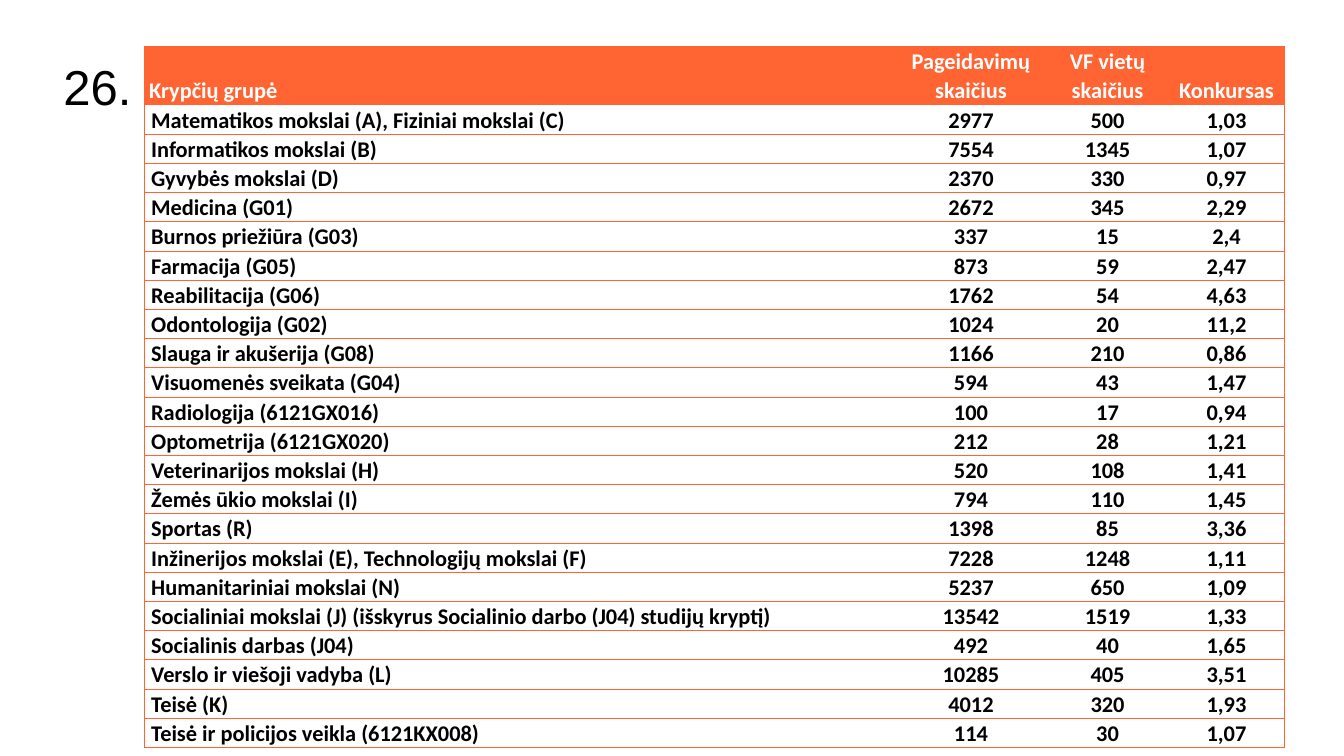
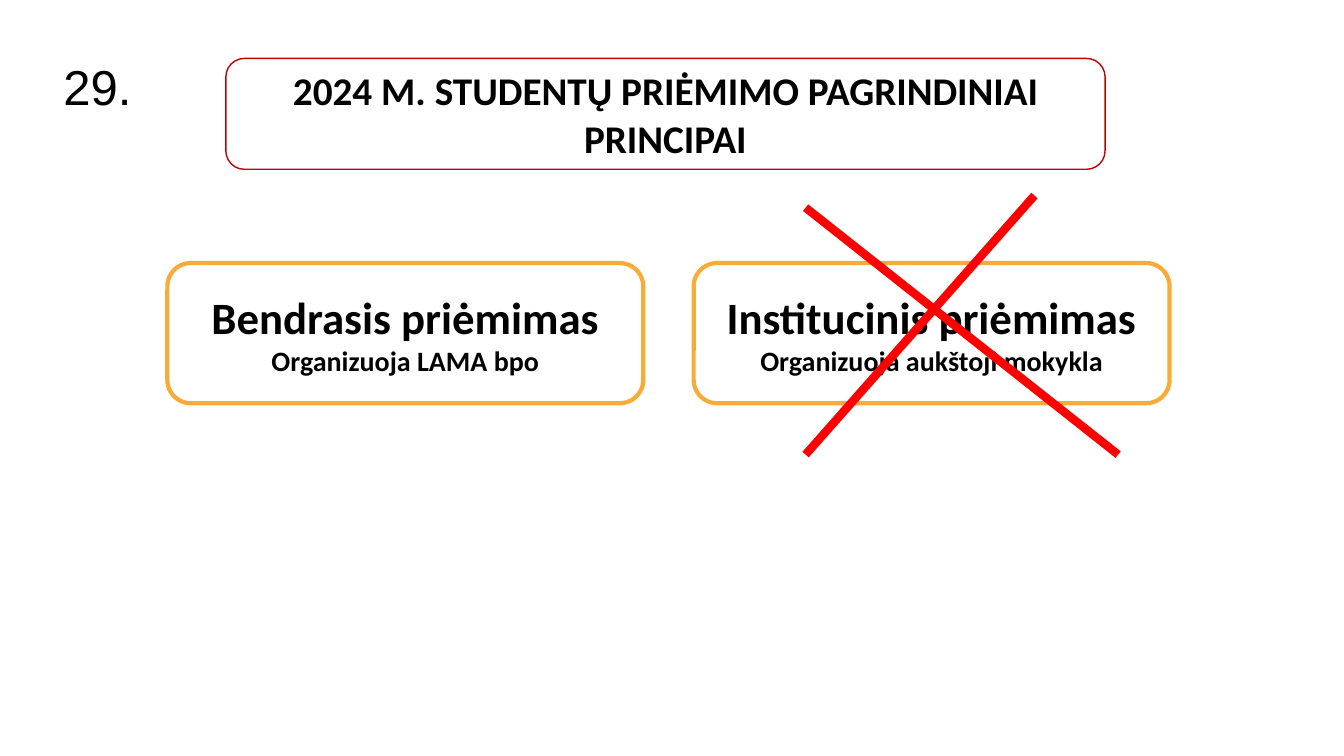
from dataclasses import dataclass

from lxml import etree
from pptx import Presentation
from pptx.dml.color import RGBColor
from pptx.enum.shapes import MSO_CONNECTOR, MSO_SHAPE
from pptx.enum.text import MSO_ANCHOR, PP_ALIGN
from pptx.oxml.ns import qn
from pptx.util import Inches, Pt

LEFT, CENTER = PP_ALIGN.LEFT, PP_ALIGN.CENTER
TOP, MIDDLE, BOTTOM = MSO_ANCHOR.TOP, MSO_ANCHOR.MIDDLE, MSO_ANCHOR.BOTTOM
ROUNDED = MSO_SHAPE.ROUNDED_RECTANGLE
STRAIGHT = MSO_CONNECTOR.STRAIGHT
PLAIN_TABLE_STYLE = "{2D5ABB26-0587-4C30-8999-92F81FD0307C}"


@dataclass(frozen=True)
class Theme:
    ink: str = "000000"
    paper: str = "FFFFFF"
    table: str = "FF6432"
    heading: str = "C00000"
    option: str = "FAAA37"
    cross: str = "FF0000"
    number_font: str = "Arial"
    body_font: str = "Calibri"
    number_size: int = 35
    heading_size: int = 28
    option_size: int = 32
    organizer_size: int = 20
    table_size: int = 16
    table_border: float = 0.5
    table_spacing: float = 1.07


THEME = Theme()

COLUMN_WIDTHS = (7.45, 1.5, 1.21, 1.15)
HEADER_HEIGHT, ROW_HEIGHT = 0.58, 0.29
HEADERS = ("Krypčių grupė", "Pageidavimų skaičius", "VF vietų skaičius", "Konkursas")
ADMISSIONS = (
    ("Matematikos mokslai (A), Fiziniai mokslai (C)", "2977", "500", "1,03"),
    ("Informatikos mokslai (B)", "7554", "1345", "1,07"),
    ("Gyvybės mokslai (D)", "2370", "330", "0,97"),
    ("Medicina (G01)", "2672", "345", "2,29"),
    ("Burnos priežiūra (G03)", "337", "15", "2,4"),
    ("Farmacija (G05)", "873", "59", "2,47"),
    ("Reabilitacija (G06)", "1762", "54", "4,63"),
    ("Odontologija (G02)", "1024", "20", "11,2"),
    ("Slauga ir akušerija (G08)", "1166", "210", "0,86"),
    ("Visuomenės sveikata (G04)", "594", "43", "1,47"),
    ("Radiologija (6121GX016)", "100", "17", "0,94"),
    ("Optometrija (6121GX020)", "212", "28", "1,21"),
    ("Veterinarijos mokslai (H)", "520", "108", "1,41"),
    ("Žemės ūkio mokslai (I)", "794", "110", "1,45"),
    ("Sportas (R)", "1398", "85", "3,36"),
    ("Inžinerijos mokslai (E), Technologijų mokslai (F)", "7228", "1248", "1,11"),
    ("Humanitariniai mokslai (N)", "5237", "650", "1,09"),
    ("Socialiniai mokslai (J) (išskyrus Socialinio darbo (J04) studijų kryptį)",
     "13542", "1519", "1,33"),
    ("Socialinis darbas (J04)", "492", "40", "1,65"),
    ("Verslo ir viešoji vadyba (L)", "10285", "405", "3,51"),
    ("Teisė (K)", "4012", "320", "1,93"),
    ("Teisė ir policijos veikla (6121KX008)", "114", "30", "1,07"),
)
OPTIONS = (
    ("Bendrasis priėmimas", "Organizuoja LAMA bpo"),
    ("Institucinis priėmimas", "Organizuoja aukštoji mokykla"),
)
OPTION_LEFT, OPTION_TOP, OPTION_WIDTH, OPTION_HEIGHT = 1.66, 2.61, 4.72, 1.39
OPTION_GAP = 0.5
CROSS_STROKES = ((7.99, 2.06, 11.09, 4.51), (10.26, 1.94, 7.99, 4.51))


def write(paragraph, text, size, color=THEME.ink, font=THEME.body_font, bold=True, align=CENTER):
    paragraph.text = text
    paragraph.alignment = align
    for run in paragraph.runs:
        run.font.name = font
        run.font.size = Pt(size)
        run.font.bold = bold
        run.font.color.rgb = RGBColor.from_string(color)


def add_number(slide, text):
    number = slide.shapes.add_textbox(Inches(0.53), Inches(0.46), Inches(0.96), Inches(0.62))
    frame = number.text_frame
    frame.word_wrap = True
    frame.vertical_anchor = TOP
    frame.margin_top, frame.margin_bottom = Inches(0.1), 0
    write(frame.paragraphs[0], text, THEME.number_size,
          font=THEME.number_font, bold=False, align=LEFT)


def set_borders(cell, visible_sides):
    properties = cell._tc.get_or_add_tcPr()
    for side in "LRTB":
        border = etree.SubElement(properties, qn(f"a:ln{side}"), w=str(Pt(THEME.table_border)))
        if side in visible_sides:
            fill = etree.SubElement(border, qn("a:solidFill"))
            etree.SubElement(fill, qn("a:srgbClr"), val=THEME.table)
        else:
            etree.SubElement(border, qn("a:noFill"))


def fill_cell(cell, text, column, is_header):
    last = len(HEADERS) - 1
    set_borders(cell, "TB" + "L" * (column == 0) + "R" * (column == last))
    cell.fill.solid()
    cell.fill.fore_color.rgb = RGBColor.from_string(THEME.table if is_header else THEME.paper)
    cell.margin_left = cell.margin_right = Inches(0.05 if is_header else 0.07)
    cell.margin_top = cell.margin_bottom = 0
    cell.vertical_anchor = BOTTOM
    paragraph = cell.text_frame.paragraphs[0]
    write(paragraph, text, THEME.table_size,
          color=THEME.paper if is_header else THEME.ink,
          align=CENTER if column else LEFT)
    paragraph.line_spacing = THEME.table_spacing


def add_admissions_table(slide):
    rows = (HEADERS, *ADMISSIONS)
    height = HEADER_HEIGHT + ROW_HEIGHT * len(ADMISSIONS)
    holder = slide.shapes.add_table(len(rows), len(HEADERS), Inches(1.43), Inches(0.46),
                                    Inches(sum(COLUMN_WIDTHS)), Inches(height))
    for style in holder.element.iter(qn("a:tableStyleId")):
        style.text = PLAIN_TABLE_STYLE
    table = holder.table
    table.horz_banding = False
    for column, width in zip(table.columns, COLUMN_WIDTHS):
        column.width = Inches(width)
    for index, values in enumerate(rows):
        table.rows[index].height = Inches(ROW_HEIGHT if index else HEADER_HEIGHT)
        for column, text in enumerate(values):
            fill_cell(table.cell(index, column), text, column, index == 0)


def add_panel(slide, left, top, width, height, outline, outline_width, lines):
    panel = slide.shapes.add_shape(ROUNDED, Inches(left), Inches(top),
                                   Inches(width), Inches(height))
    panel.shadow.inherit = False
    panel.fill.solid()
    panel.fill.fore_color.rgb = RGBColor.from_string(THEME.paper)
    panel.line.color.rgb = RGBColor.from_string(outline)
    panel.line.width = Pt(outline_width)
    frame = panel.text_frame
    frame.word_wrap = True
    frame.vertical_anchor = MIDDLE
    for index, (text, size) in enumerate(lines):
        paragraph = frame.add_paragraph() if index else frame.paragraphs[0]
        write(paragraph, text, size)


def add_stroke(slide, *ends):
    stroke = slide.shapes.add_connector(STRAIGHT, *map(Inches, ends))
    stroke.line.color.rgb = RGBColor.from_string(THEME.cross)
    stroke.line.width = Pt(6)
    etree.SubElement(stroke.element.spPr, qn("a:effectLst"))


def add_numbered_slide(deck, number):
    slide = deck.slides.add_slide(deck.slide_layouts[6])
    add_number(slide, number)
    return slide


def build_competition(deck):
    add_admissions_table(add_numbered_slide(deck, "26."))


def build_principles(deck):
    slide = add_numbered_slide(deck, "29.")
    add_panel(slide, 2.24, 0.58, 8.72, 1.1, THEME.heading, 1,
              [("2024 M. STUDENTŲ PRIĖMIMO PAGRINDINIAI PRINCIPAI", THEME.heading_size)])
    for index, (option, organizer) in enumerate(OPTIONS):
        left = OPTION_LEFT + index * (OPTION_WIDTH + OPTION_GAP)
        add_panel(slide, left, OPTION_TOP, OPTION_WIDTH, OPTION_HEIGHT, THEME.option, 3,
                  [(option, THEME.option_size), (organizer, THEME.organizer_size)])
    for ends in CROSS_STROKES:
        add_stroke(slide, *ends)


def main():
    deck = Presentation()
    deck.slide_width, deck.slide_height = Inches(13.33), Inches(7.5)
    build_competition(deck)
    build_principles(deck)
    deck.save("out.pptx")


if __name__ == "__main__":
    main()
